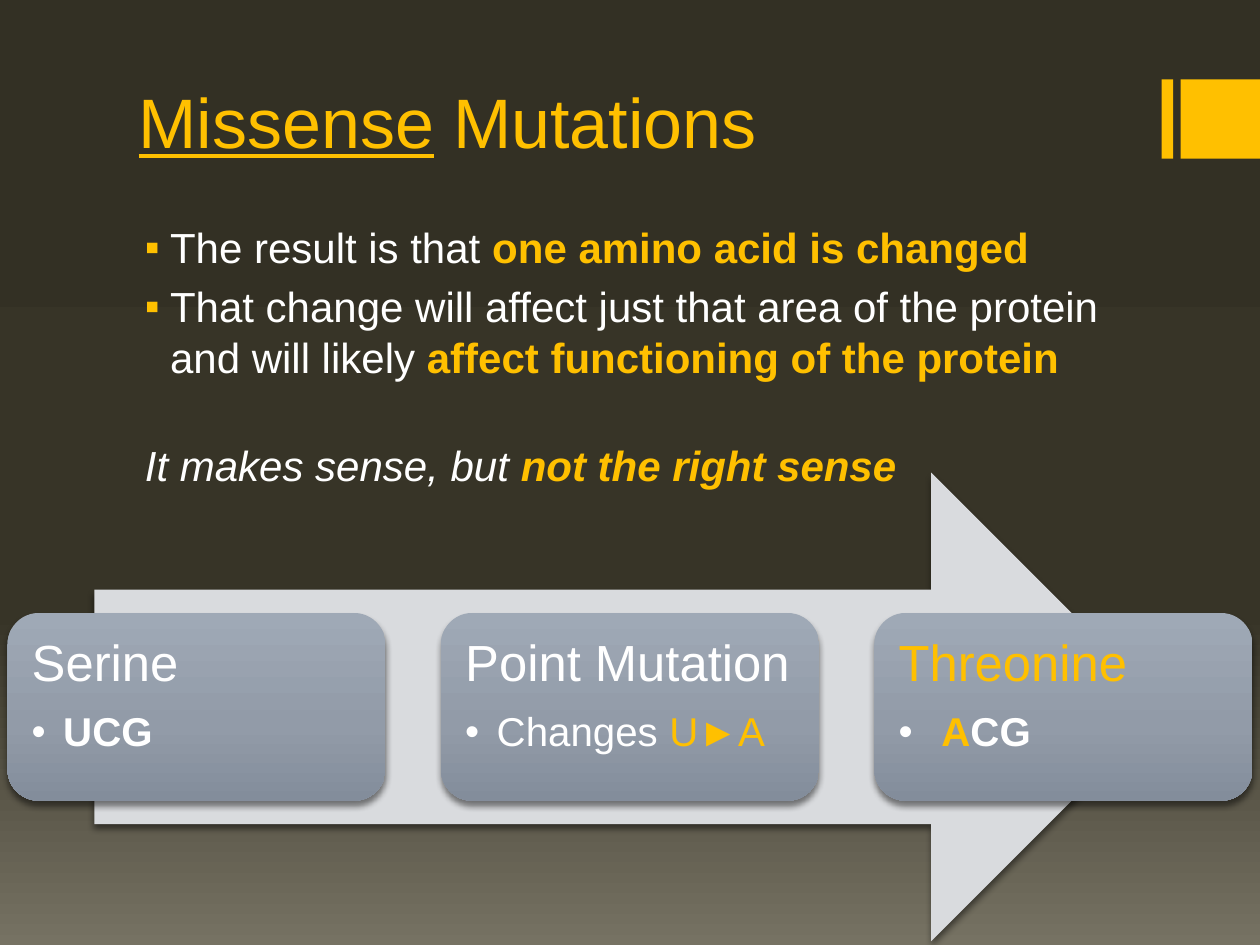
from dataclasses import dataclass
from lxml.etree import SubElement
from pptx import Presentation
from pptx.dml.color import RGBColor as RGB
from pptx.enum.shapes import MSO_SHAPE as SHAPE
from pptx.enum.text import MSO_ANCHOR as ANCHOR, MSO_AUTO_SIZE as AUTO, PP_ALIGN as ALIGN
from pptx.oxml.ns import qn
from pptx.util import Inches, Pt


@dataclass(frozen=True)
class Theme:
    font: str = "Arial"
    gold: str = "FFC000"
    white: str = "FFFFFF"
    arrow: str = "D9DBDE"
    shadow: str = "000000"
    back: tuple = ((0, "333024"), (65, "373427"), (100, "767263"))
    card: tuple = ((0, "9FA9B6"), (60, "929BA8"), (100, "838D9B"))
    title: int = 40
    body: int = 24
    head: int = 29
    item: int = 23


T = Theme()
W, H = 10, 7.5

TITLE = [("Missense", "gu"), (" Mutations", "g")]
BODY = [
    ("▪", 0, [("The result is that ", ""), ("one amino acid is changed", "gb")]),
    ("▪", 5, [("That change will affect just that area of the protein and will likely ", ""),
              ("affect functioning of the protein", "gb")]),
    (None, 33, [("It makes sense, but ", "i"), ("not the right sense", "gbi")]),
]
CARDS = [
    ([("Serine", "")], [("UCG", "b")]),
    ([("Point Mutation", "")], [("Changes ", ""), ("U►A", "g")]),
    ([("Threonine", "g")], [(" ", "b"), ("A", "gb"), ("CG", "b")]),
]
BAR_Y, BAR_H = 0.63, 0.63
BARS = [(9.22, 0.09), (W - BAR_H, BAR_H)]
MID_Y = 5.61
ARROW_W, ARROW_H = 0.85 * W, 3.72
CARD_W, CARD_H, CARD_X, PITCH = 3, 1.49, 0.06, 3.44


def place(sp, *box):
    sp.left, sp.top, sp.width, sp.height = map(Inches, box)


def write(p, runs, size):
    for text, marks in runs:
        r = p.add_run()
        r.text = text
        f = r.font
        f.name, f.size = T.font, Pt(size)
        f.color.rgb = RGB.from_string(T.gold if "g" in marks else T.white)
        f.bold, f.italic, f.underline = "b" in marks, "i" in marks, "u" in marks


def bullet(p, char, left, hang, color):
    pPr = p._p.get_or_add_pPr()
    pPr.set("marL", str(Inches(left)))
    pPr.set("indent", str(Inches(-hang)))
    if not char:
        SubElement(pPr, qn("a:buNone"))
        return
    SubElement(SubElement(pPr, qn("a:buClr")), qn("a:srgbClr"), val=color)
    SubElement(pPr, qn("a:buFont"), typeface=T.font)
    SubElement(pPr, qn("a:buChar"), char=char)


def gradient(fill, element, stops):
    fill.gradient()
    fill.gradient_angle = 270
    gs_list = next(element.iter(qn("a:gsLst")))
    for gs in list(gs_list):
        gs_list.remove(gs)
    for pos, color in stops:
        gs = SubElement(gs_list, qn("a:gs"), pos=str(pos * 1000))
        SubElement(gs, qn("a:srgbClr"), val=color)


def add_shape(slide, kind, box, fill, shadow=False):
    sp = slide.shapes.add_shape(kind, *map(Inches, box))
    sp.line.fill.background()
    sp.shadow.inherit = False
    if isinstance(fill, str):
        sp.fill.solid()
        sp.fill.fore_color.rgb = RGB.from_string(fill)
    else:
        gradient(sp.fill, sp._element, fill)
    if shadow:
        effects = sp._element.spPr.find(qn("a:effectLst"))
        outer = SubElement(effects, qn("a:outerShdw"), blurRad=str(Pt(3.8)),
                           dist=str(Pt(3)), dir="5400000", rotWithShape="0")
        color = SubElement(outer, qn("a:srgbClr"), val=T.shadow)
        SubElement(color, qn("a:alpha"), val="48000")
    return sp


def add_card(slide, i, head, item):
    box = (CARD_X + i * PITCH, MID_Y - CARD_H / 2, CARD_W, CARD_H)
    tf = add_shape(slide, SHAPE.ROUNDED_RECTANGLE, box, T.card, True).text_frame
    tf.word_wrap, tf.vertical_anchor = True, ANCHOR.TOP
    tf.margin_left = tf.margin_right = tf.margin_top = tf.margin_bottom = Inches(0.12)
    p = tf.paragraphs[0]
    write(p, head, T.head)
    p.space_after = Pt(11.5)
    q = tf.add_paragraph()
    bullet(q, "•", 0.25, 0.25, T.white)
    write(q, item, T.item)
    for par in (p, q):
        par.alignment, par.line_spacing = ALIGN.LEFT, 0.9


def main():
    prs = Presentation()
    prs.slide_width, prs.slide_height = Inches(W), Inches(H)
    slide = prs.slides.add_slide(prs.slide_layouts[1])
    gradient(slide.background.fill, slide._element, T.back)

    for x, w in BARS:
        add_shape(slide, SHAPE.RECTANGLE, (x, BAR_Y, w, BAR_H), T.gold)

    title, body = slide.placeholders
    place(title, 0.1 * W, 0.08, 0.8 * W, 1.26)
    tf = title.text_frame
    tf.auto_size, tf.vertical_anchor = AUTO.NONE, ANCHOR.BOTTOM
    p = tf.paragraphs[0]
    p.alignment = ALIGN.LEFT
    write(p, TITLE, T.title)

    place(body, 0.1 * W, 1.67, 0.8 * W, 3.87)
    tf = body.text_frame
    tf.auto_size, tf.margin_top = AUTO.NONE, Inches(0.09)
    for i, (char, gap, runs) in enumerate(BODY):
        p = tf.add_paragraph() if i else tf.paragraphs[0]
        bullet(p, char, *((0.25, 0.2) if char else (0.05, 0)), T.gold)
        p.space_before = Pt(gap)
        write(p, runs, T.body)

    add_shape(slide, SHAPE.RIGHT_ARROW,
              ((W - ARROW_W) / 2, MID_Y - ARROW_H / 2, ARROW_W, ARROW_H), T.arrow, True)
    for i, (head, item) in enumerate(CARDS):
        add_card(slide, i, head, item)
    prs.save("out.pptx")


if __name__ == "__main__":
    main()
